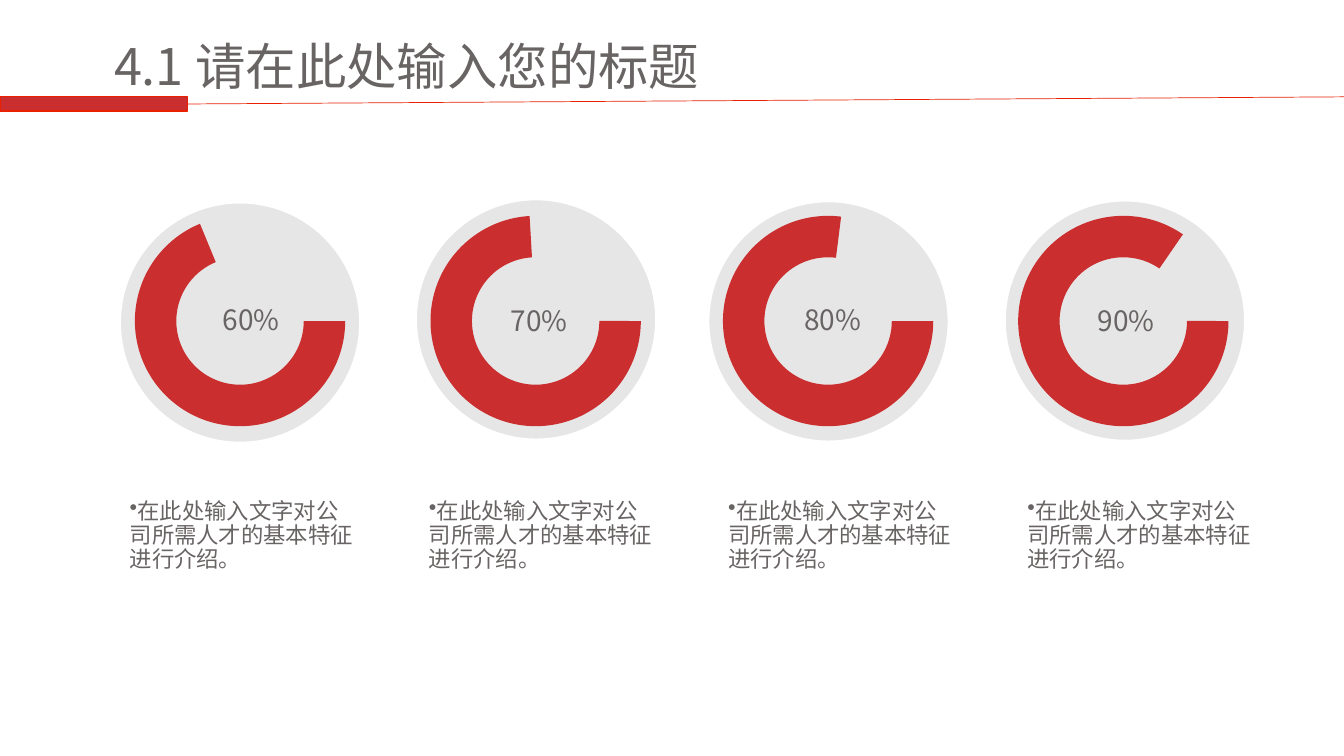
import pptx
import pptx.util
import pptx.dml.color
import pptx.enum.shapes
import pptx.enum.text
import pptx.oxml
import pptx.oxml.ns
from pptx.util import Cm

# Content: percentage, end angle of the ring in degrees
TITLE = "4.1 请在此处输入您的标题"
NOTE = "在此处输入文字对公司所需人才的基本特征进行介绍。"
# Per gauge: label, ring end angle, disc left and top, ring left, label left and top
GAUGES = [
    ("60%", 247.6, (3.0, 5.08), 3.4, (5.36, 7.49)),
    ("70%", 266.7, (10.46, 5.0), 10.85, (12.62, 7.52)),
    ("80%", 277.1, (17.83, 5.05), 18.22, (20.02, 7.49)),
    ("90%", 304.5, (25.3, 5.03), 25.66, (27.41, 7.52)),
]

FONT = "Noto Sans CJK SC"
RED = pptx.dml.color.RGBColor(0xCB, 0x2E, 0x2E)
ORANGE = pptx.dml.color.RGBColor(0xE9, 0x21, 0x00)
GREY = pptx.dml.color.RGBColor(0x69, 0x64, 0x64)
SILVER = pptx.dml.color.RGBColor(0xD7, 0xD7, 0xD7)
WHITE = pptx.dml.color.RGBColor(0xFF, 0xFF, 0xFF)

DISC, RING, BAND = 6.1, 5.3, 0.197
NOTE_LEFT, NOTE_TOP, NOTE_STEP = 3.02, 12.47, 7.54

SHAPES = pptx.enum.shapes.MSO_SHAPE
ANCHOR = pptx.enum.text.MSO_ANCHOR


def add_filled(page, kind, left, top, width, height, color):
    shape = page.shapes.add_shape(kind, Cm(left), Cm(top), Cm(width), Cm(height))
    shape.shadow.inherit = False
    shape.fill.solid()
    shape.fill.fore_color.rgb = color
    shape.line.fill.background()
    return shape


def write(box, text, size, wrap=True, anchor=ANCHOR.TOP, bullet=False):
    frame = box.text_frame
    frame.word_wrap = wrap
    frame.vertical_anchor = anchor
    para = frame.paragraphs[0]
    para.alignment = pptx.enum.text.PP_ALIGN.LEFT
    para.line_spacing = 0.9 if bullet else 1.0
    if bullet:
        mark = pptx.oxml.parse_xml(
            f'<a:buChar {pptx.oxml.ns.nsdecls("a")} char="•"/>')
        para._p.get_or_add_pPr().append(mark)
    span = para.add_run()
    span.text = text
    span.font.name = FONT
    span.font.size = pptx.util.Pt(size)
    span.font.color.rgb = GREY
    east_asian = pptx.oxml.parse_xml(
        f'<a:ea {pptx.oxml.ns.nsdecls("a")} typeface="{FONT}"/>')
    span.font._element.find(pptx.oxml.ns.qn("a:latin")).addnext(east_asian)


deck = pptx.Presentation()
deck.slide_width, deck.slide_height = Cm(33.87), Cm(19.05)
page = deck.slides.add_slide(deck.slide_layouts[5])

# Title with its bar and rule
title = page.shapes.title
title.left, title.top, title.width, title.height = Cm(2.62), Cm(0.74), Cm(27.1), Cm(1.8)
write(title, TITLE, 36, anchor=ANCHOR.MIDDLE)

bar = add_filled(page, SHAPES.RECTANGLE, 0, 2.44, 4.72, 0.36, RED)
bar.line.color.rgb = ORANGE
bar.line.width = pptx.util.Pt(1)

rule = page.shapes.add_connector(
    pptx.enum.shapes.MSO_CONNECTOR.STRAIGHT, Cm(4.72), Cm(2.62), Cm(33.87), Cm(2.44))
rule.begin_connect(bar, 3)
rule.line.color.rgb = ORANGE
rule.line.width = pptx.util.Pt(0.5)
rule._element.spPr.append(
    pptx.oxml.parse_xml(f'<a:effectLst {pptx.oxml.ns.nsdecls("a")}/>'))

# Gauges: pale disc, ring, percentage and note
for index, (percent, angle, disc_at, ring_left, label_at) in enumerate(GAUGES):
    disc = add_filled(page, SHAPES.OVAL, *disc_at, DISC, DISC, SILVER)
    disc.line.color.rgb = WHITE
    disc.line.width = pptx.util.Pt(2.75)
    tint = disc.fill._xPr.find(".//" + pptx.oxml.ns.qn("a:srgbClr"))
    tint.append(pptx.oxml.parse_xml(
        f'<a:alpha {pptx.oxml.ns.nsdecls("a")} val="62000"/>'))

    ring = add_filled(page, SHAPES.BLOCK_ARC, ring_left, 5.44, RING, RING, RED)
    ring.adjustments[0] = 0
    ring.adjustments[1] = angle * 0.6
    ring.adjustments[2] = BAND

    label = page.shapes.add_textbox(
        Cm(label_at[0]), Cm(label_at[1]), Cm(1.97), Cm(1.14))
    write(label, percent, 20, wrap=False)

    note = page.shapes.add_textbox(
        Cm(NOTE_LEFT + index * NOTE_STEP), Cm(NOTE_TOP), Cm(6.17), Cm(2.11))
    write(note, NOTE, 16, bullet=True)

deck.save("out.pptx")
